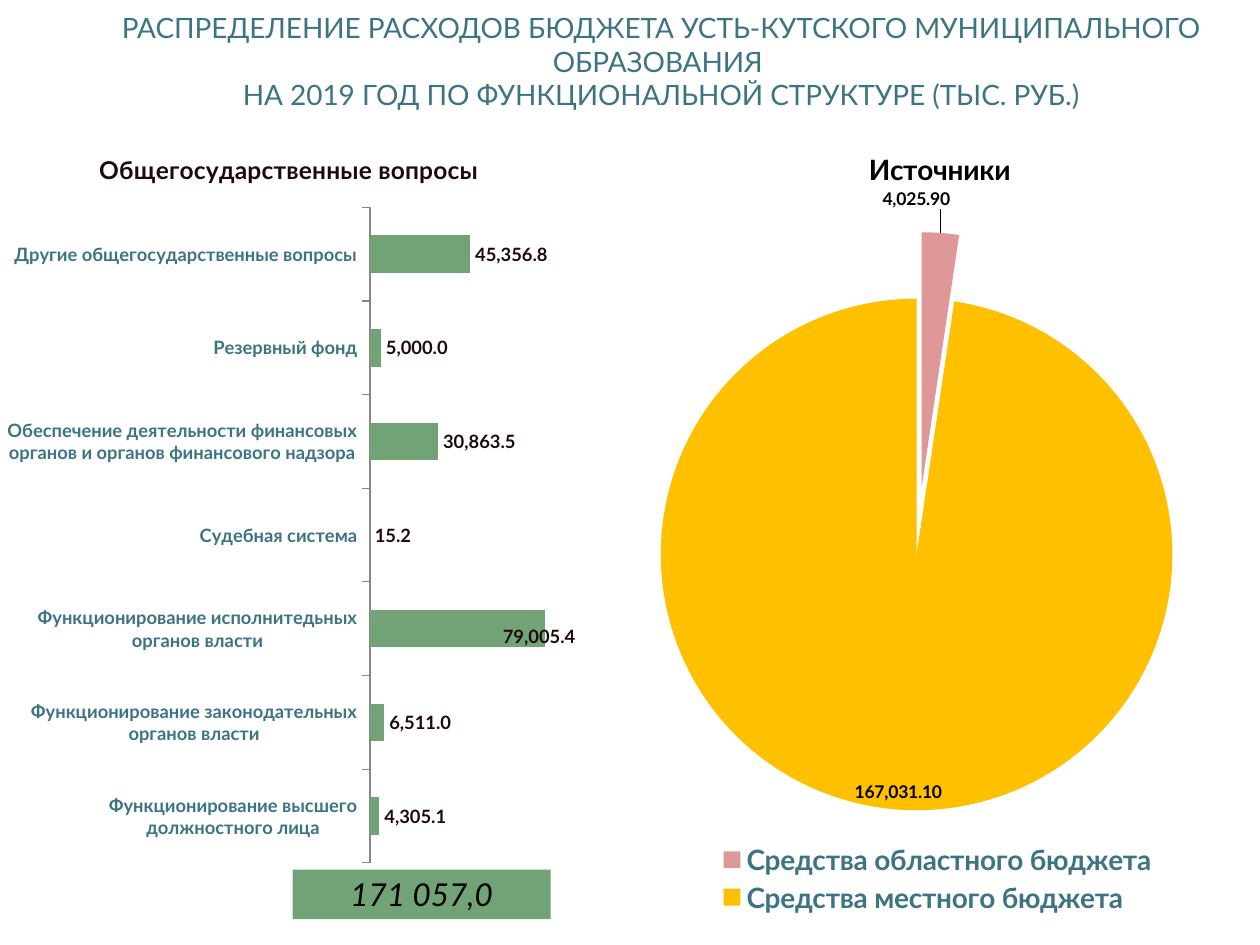
from lxml import etree
from pptx import Presentation
from pptx import util as u
from pptx.chart.data import CategoryChartData
from pptx.dml.color import RGBColor
from pptx.enum import chart as ch
from pptx.enum import shapes, text
from pptx.oxml.ns import qn

FONT = "Lato"
TEAL, GREEN, DARK, BLACK = "3C7483", "72A376", "1F0A0A", "000000"
PINK, AMBER, GREY = "DE9898", "FFC000", "868686"

HEADING = ["РАСПРЕДЕЛЕНИЕ РАСХОДОВ БЮДЖЕТА УСТЬ-КУТСКОГО МУНИЦИПАЛЬНОГО ОБРАЗОВАНИЯ ",
           "НА 2019 ГОД ПО ФУНКЦИОНАЛЬНОЙ СТРУКТУРЕ (ТЫС. РУБ.)"]
EXPENSES = {
    "Функционирование высшего должностного лица": 4305.1,
    "Функционирование законодательных органов власти": 6511.0,
    "Функционирование исполнитедьных органов власти": 79005.4,
    "Судебная система": 15.2,
    "Обеспечение деятельности финансовых органов и органов финансового надзора": 30863.5,
    "Резервный фонд": 5000.0,
    "Другие общегосударственные вопросы": 45356.8,
}
SOURCES = {"Средства областного бюджета": 4025.9, "Средства местного бюджета": 167031.1}


def color(value):
    return RGBColor.from_string(value)


def set_font(font, size, hex_color, bold=None, italic=None):
    font.name, font.size, font.bold, font.italic = FONT, u.Pt(size), bold, italic
    font.color.rgb = color(hex_color)


def paint(fmt, hex_color):
    fmt.fill.solid()
    fmt.fill.fore_color.rgb = color(hex_color)


def write_lines(sp, lines, size, hex_color, italic=None):
    """Centre the lines in the shape as one paragraph."""
    tf = sp.text_frame
    tf.word_wrap = True
    tf.vertical_anchor = text.MSO_ANCHOR.MIDDLE
    p = tf.paragraphs[0]
    p.alignment = text.PP_ALIGN.CENTER
    for i, line in enumerate(lines):
        if i:
            p.add_line_break()
        r = p.add_run()
        r.text = line
        set_font(r.font, size, hex_color, italic=italic)


def add_heading(s):
    sp = s.shapes.add_textbox(u.Cm(1.27), u.Cm(0.33), u.Cm(24.13), u.Cm(1.8))
    write_lines(sp, HEADING, 16, TEAL)


def add_total(s):
    sp = s.shapes.add_shape(shapes.MSO_SHAPE.RECTANGLE,
                            u.Cm(5.9), u.Cm(17.53), u.Cm(5.2), u.Cm(1))
    sp.shadow.inherit = False
    paint(sp, GREEN)
    sp.line.fill.background()
    write_lines(sp, ["171 057,0"], 18, BLACK, italic=True)


def place(parent, index, **values):
    """Give a chart part a manual layout, as fractions of the chart."""
    for old in parent.findall(qn("c:layout")):
        parent.remove(old)
    layout = etree.Element(qn("c:layout"))
    manual = etree.SubElement(layout, qn("c:manualLayout"))
    for tag, value in values.items():
        etree.SubElement(manual, qn("c:" + tag), val=str(value))
    parent.insert(index, layout)


def add_chart(s, kind, box, title, data, title_size, title_color, title_at):
    cd = CategoryChartData()
    cd.categories = list(data)
    cd.add_series(title, list(data.values()))
    chart = s.shapes.add_chart(kind, *map(u.Cm, box), cd).chart
    set_font(chart.font, 18, BLACK)
    chart.has_title = True
    r = chart.chart_title.text_frame.paragraphs[0].add_run()
    r.text = title
    set_font(r.font, title_size, title_color, bold=True)
    place(chart.chart_title._element, 1, xMode="edge", yMode="edge",
          x=title_at[0], y=title_at[1])
    return chart


def label_values(series, number_format, size, hex_color, position):
    labels = series.data_labels
    labels.show_value = True
    labels.number_format = number_format
    labels.number_format_is_linked = False
    labels.position = position
    set_font(labels.font, size, hex_color, bold=True)


def move_label(series, index, number_format, size, hex_color, position, x, y):
    """Shift one value label from its standard position."""
    label = series.points[index].data_label
    label.position = position
    set_font(label.font, size, hex_color, bold=True)
    node = label._dLbl
    place(node, 1, x=x, y=y)
    node.insert(2, etree.Element(qn("c:numFmt"), formatCode=number_format,
                                 sourceLinked="0"))


def add_expense_bars(s):
    chart = add_chart(s, ch.XL_CHART_TYPE.BAR_CLUSTERED, (-0.1, 2.51, 11.81, 15.19),
                      "Общегосударственные вопросы", EXPENSES, 14, DARK, (0.17, 0.03))
    chart.has_legend = False
    plot = chart.plots[0]
    place(plot._element.getparent(), 0, layoutTarget="inner",
          xMode="edge", yMode="edge", x=0.64, y=0.11, w=0.34, h=0.87)
    plot.gap_width = 150
    plot.vary_by_categories = False
    series = plot.series[0]
    paint(series.format, GREEN)
    outside = ch.XL_LABEL_POSITION.OUTSIDE_END
    label_values(series, "#,##0.0", 10.5, DARK, outside)
    move_label(series, 2, "#,##0.0", 10.5, DARK, outside, -0.08, 0.01)

    values = chart.value_axis
    values.visible = False
    values.has_major_gridlines = False
    values.minimum_scale, values.maximum_scale = 0, 90000
    categories = chart.category_axis
    categories.major_tick_mark = ch.XL_TICK_MARK.OUTSIDE
    categories.format.line.color.rgb = color(GREY)
    set_font(categories.tick_labels.font, 10.5, TEAL, bold=True)


def add_source_pie(s):
    chart = add_chart(s, ch.XL_CHART_TYPE.PIE, (12.7, 2.51, 12.4, 16),
                      "Источники", SOURCES, 16, BLACK, (0.38, 0.025))
    plot = chart.plots[0]
    place(plot._element.getparent(), 0, layoutTarget="inner",
          xMode="edge", yMode="edge", x=0, y=0, w=0.94, h=1)
    plot.vary_by_categories = True
    series = plot.series[0]
    series._element.find(qn("c:tx")).addnext(
        etree.Element(qn("c:explosion"), val="13"))
    for i, fill in enumerate((PINK, AMBER)):
        paint(series.points[i].format, fill)
    inside, outside = ch.XL_LABEL_POSITION.INSIDE_END, ch.XL_LABEL_POSITION.OUTSIDE_END
    label_values(series, "#,##0.00", 10, BLACK, inside)
    move_label(series, 0, "#,##0.00", 10, BLACK, outside, -0.04, -0.02)

    chart.has_legend = True
    legend = chart.legend
    legend.position = ch.XL_LEGEND_POSITION.BOTTOM
    legend.include_in_layout = False
    set_font(legend.font, 16, TEAL, bold=True)
    place(legend._element, 1, xMode="edge", yMode="edge", x=0.13, y=0.9, w=0.74, h=0.1)


def main():
    prs = Presentation()
    prs.slide_width, prs.slide_height = u.Cm(25.4), u.Cm(19.05)
    s = prs.slides.add_slide(prs.slide_layouts[6])
    add_heading(s)
    add_expense_bars(s)
    add_total(s)
    add_source_pie(s)
    prs.save("out.pptx")


if __name__ == "__main__":
    main()
